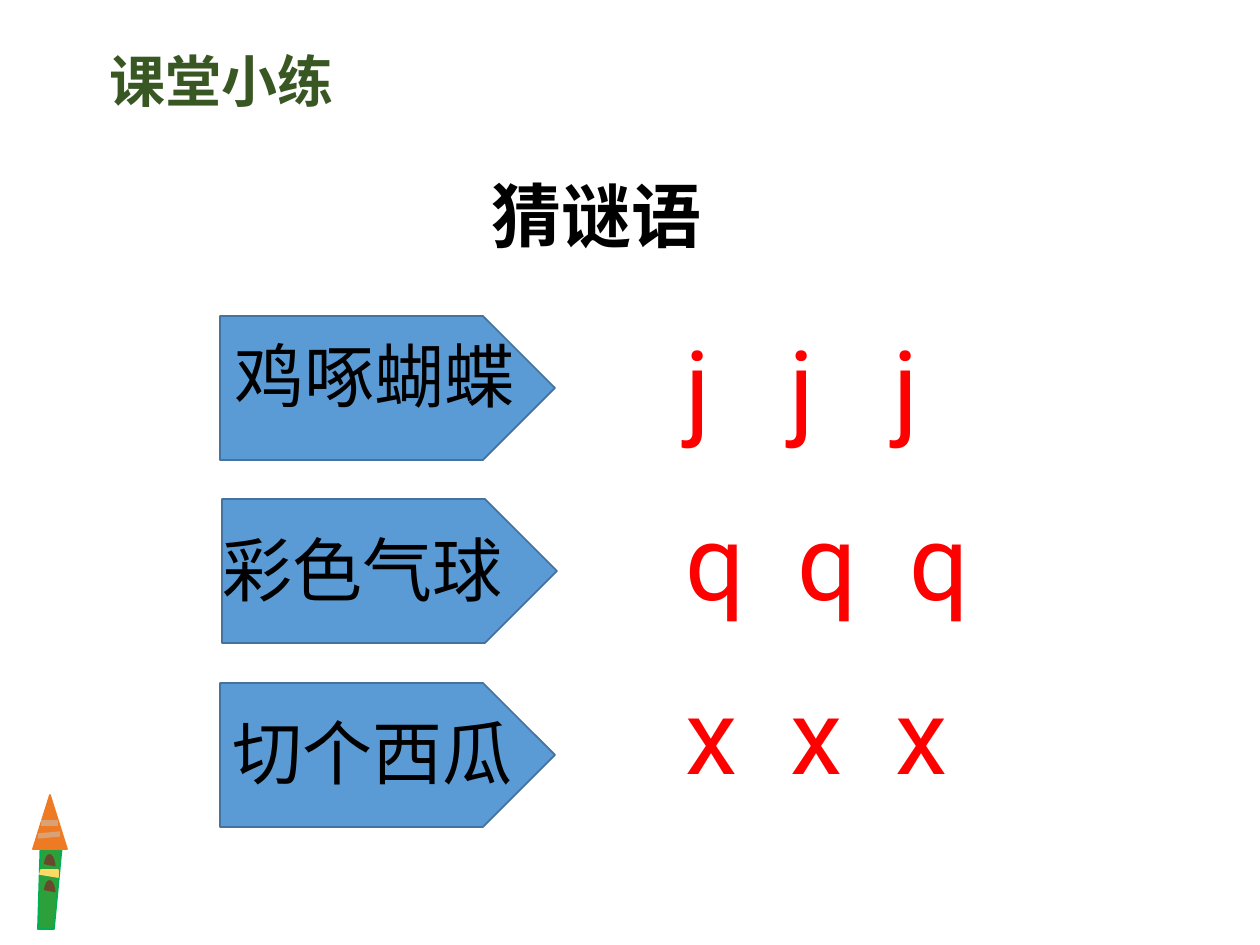
"""Builds the classroom riddle slide with its three arrow cards and letter answers."""
from dataclasses import dataclass

import lxml.etree
import pptx
import pptx.dml.color
import pptx.enum.shapes
import pptx.enum.text
import pptx.oxml.ns
import pptx.util

PX = 914400 / 126
SHAPE = pptx.enum.shapes.MSO_SHAPE
QN = pptx.oxml.ns.qn


@dataclass
class Theme:
    cjk: str = "Noto Sans CJK SC"
    latin: str = "Roboto"
    heading: str = "385723"
    ink: str = "000000"
    answer: str = "FF0000"
    card: str = "5B9BD5"
    card_line: str = "43739E"
    body: str = "2CA03B"
    body_line: str = "00B050"
    tip: str = "EE7A24"
    spot: str = "69482C"
    band: str = "FFD966"
    stripe: str = "D9A275"
    heading_pt: int = 32
    text_pt: int = 40
    answer_pt: int = 60


def paint(sp, fill, line):
    sp.shadow.inherit = False
    sp.fill.solid()
    sp.fill.fore_color.rgb = pptx.dml.color.RGBColor.from_string(fill)
    sp.line.color.rgb = pptx.dml.color.RGBColor.from_string(line)
    sp.line.width = pptx.util.Pt(1)


def write(sp, text, font, size, color, bold=False, spacing=None, tab=None):
    tf = sp.text_frame
    tf.word_wrap = True
    tf.auto_size = pptx.enum.text.MSO_AUTO_SIZE.SHAPE_TO_FIT_TEXT
    tf.vertical_anchor = pptx.enum.text.MSO_ANCHOR.TOP
    p = tf.paragraphs[0]
    p.text = text
    if spacing:
        p.line_spacing = spacing
    if tab:
        tabs = lxml.etree.SubElement(p._p.get_or_add_pPr(), QN("a:tabLst"))
        for n in (1, 2):
            lxml.etree.SubElement(tabs, QN("a:tab"), pos=str(int(n * tab * PX)), algn="l")
    p.font.name = font
    p.font.size = pptx.util.Pt(size)
    p.font.bold = bold
    p.font.color.rgb = pptx.dml.color.RGBColor.from_string(color)
    rpr = p._p.pPr.find(QN("a:defRPr"))
    lxml.etree.SubElement(rpr, QN("a:ea"), typeface=font)
    return p


theme = Theme()
prs = pptx.Presentation()
prs.slide_width = int(1260 * PX)
prs.slide_height = int(945 * PX)
s = prs.slides.add_slide(prs.slide_layouts[5])

pencil_body = [(41, 833), (62, 845), (54, 929), (38, 929)]
pencil_band = [(41, 870), (58, 870), (58, 877), (40, 874)]
pencil_parts = [
    ("outline", pencil_body, theme.body, theme.body_line),
    (SHAPE.ISOSCELES_TRIANGLE, (33, 795, 34, 54), theme.tip, theme.tip),
    (SHAPE.CHORD, (33, 866, 33, 11), theme.spot, theme.spot),
    ("outline", pencil_band, theme.band, theme.band),
    (SHAPE.CHORD, (33, 892, 33, 11), theme.spot, theme.spot),
]
for kind, geometry, fill, line in pencil_parts:
    if kind == "outline":
        outline = s.shapes.build_freeform(*geometry[0], scale=PX)
        outline.add_line_segments(geometry[1:], close=True)
        sp = outline.convert_to_shape()
    else:
        sp = s.shapes.add_shape(kind, *[int(v * PX) for v in geometry])
    if kind == SHAPE.CHORD:
        sp.rotation = 90
        sp.adjustments[0] = 89.452
        sp.adjustments[1] = 132.133
    paint(sp, fill, line)

for ends in [(41, 823, 58, 823), (38, 836, 60, 834)]:
    stripe = s.shapes.add_connector(
        pptx.enum.shapes.MSO_CONNECTOR.STRAIGHT, *[int(v * PX) for v in ends])
    stripe.line.color.rgb = pptx.dml.color.RGBColor.from_string(theme.stripe)
    stripe.line.width = pptx.util.Pt(3)
    lxml.etree.SubElement(stripe._element.spPr, QN("a:effectLst"))

title = s.shapes.title
title.left, title.top, title.width, title.height = [int(v * PX) for v in (96, 40, 252, 81)]
p = write(title, "课堂小练", theme.cjk, theme.heading_pt, theme.heading, bold=True)
p.alignment = pptx.enum.text.PP_ALIGN.CENTER
title.text_frame.word_wrap = False

sp = s.shapes.add_textbox(*[int(v * PX) for v in (479, 166, 353, 97)])
write(sp, "猜谜语", theme.cjk, theme.text_pt, theme.ink, bold=True)

riddles = [
    ("鸡啄蝴蝶", (220, 316), (222, 310, 433, 106), "j", 104),
    ("彩色气球", (222, 499), (210, 504, 347, 106), "q", 112),
    ("切个西瓜", (220, 683), (220, 687, 309, 106), "x", 105),
]
for row, (riddle, corner, box, letter, pitch) in enumerate(riddles):
    card = s.shapes.add_shape(
        SHAPE.PENTAGON, *[int(v * PX) for v in (*corner, 335, 144)])
    paint(card, theme.card, theme.card_line)
    sp = s.shapes.add_textbox(*[int(v * PX) for v in box])
    write(sp, riddle, theme.cjk, theme.text_pt, theme.ink, spacing=1.2)
    sp = s.shapes.add_textbox(*[int(v * PX) for v in (673, 315 + 174 * row, 501, 140)])
    write(sp, "\t".join(letter * 3), theme.latin, theme.answer_pt, theme.answer, tab=pitch)

prs.save("out.pptx")
